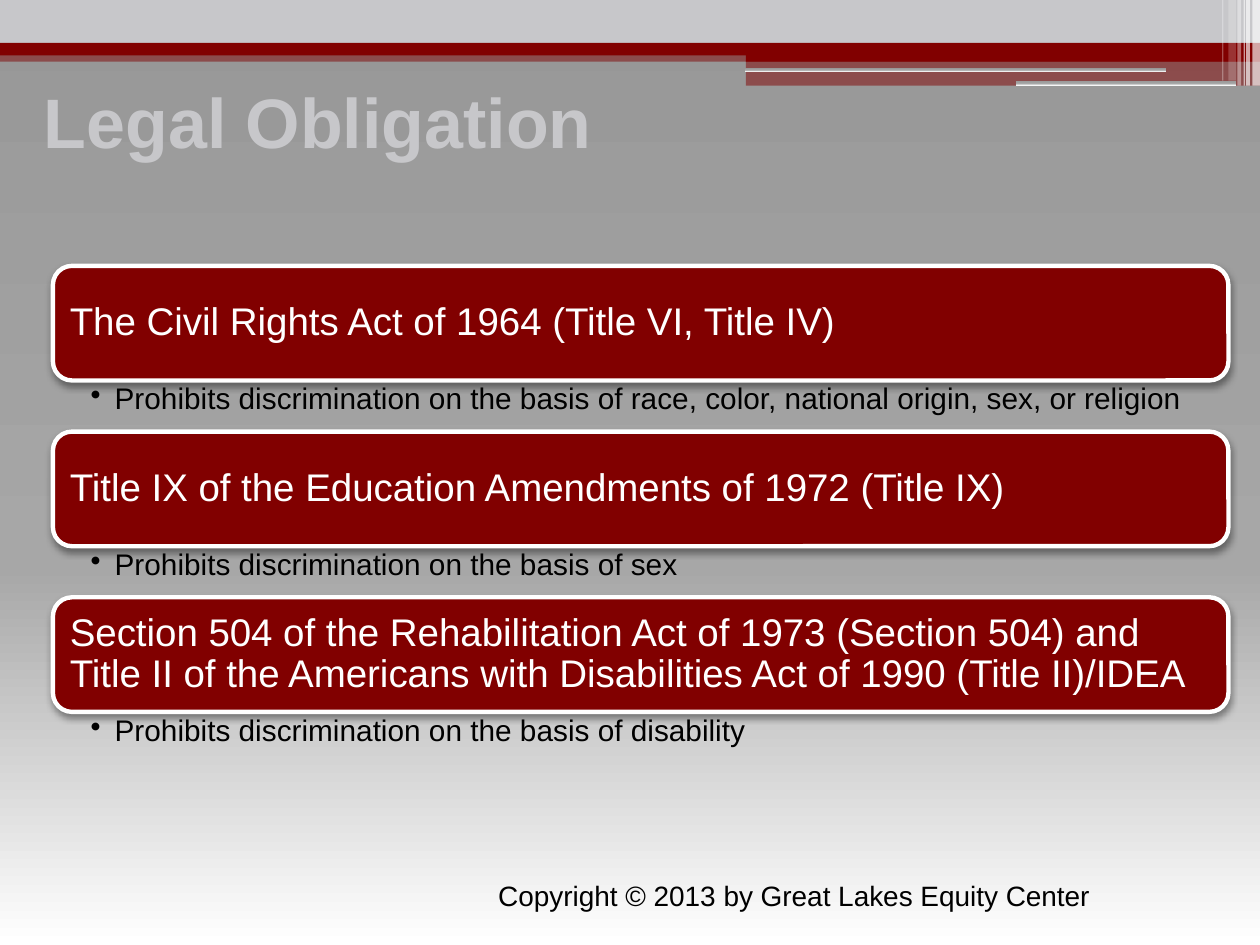
from pptx import Presentation
from pptx.dml.color import RGBColor as Rgb
from pptx.enum.shapes import MSO_SHAPE as Kind
from pptx.enum.text import MSO_ANCHOR as Anchor, PP_ALIGN as Align
from pptx.oxml import parse_xml
from pptx.oxml.ns import nsdecls
from pptx.util import Inches, Pt

HUES = {"red": "810000", "pale": "C7C7CA", "white": "FFFFFF", "black": "000000",
        "dark": "979797", "mid": "A7A7A7"}
FADE = [(0, "dark"), (60, "mid"), (100, "white")]
NS = nsdecls("a")

deck = Presentation()
deck.slide_width, deck.slide_height = Inches(10), Inches(7.5)
# Grid of 100 columns by 75 rows
col, row = deck.slide_width / 100, deck.slide_height / 75
slide = deck.slides.add_slide(deck.slide_layouts[6])


def paint(fill, node, hue, alpha=100):
    """Fill with a colour, or with the grey fade when hue is "fade"."""
    if hue == "fade":
        fill.gradient()
        fill.gradient_angle = 270
        stops = node.xpath(".//a:gsLst")[0]
        stops[:] = [parse_xml(f'<a:gs {NS} pos="{pos * 1000}"><a:srgbClr val="{HUES[tone]}"/></a:gs>')
                    for pos, tone in FADE]
        return
    fill.solid()
    fill.fore_color.rgb = Rgb.from_string(HUES[hue])
    if alpha < 100:
        node.xpath("./p:spPr/a:solidFill/a:srgbClr")[0].append(
            parse_xml(f'<a:alpha {NS} val="{alpha * 1000}"/>'))


def write(shape, text, size, hue, insets, look, bold=False):
    """Put one paragraph in a shape and return it."""
    frame = shape.text_frame
    frame.word_wrap = True
    sides = ("left", "top", "right", "bottom")
    for side, gap in zip(sides, insets):
        setattr(frame, f"margin_{side}", Inches(gap))
    frame.vertical_anchor = look.get("anchor", Anchor.TOP)
    para = frame.paragraphs[0]
    para.alignment = look.get("align", Align.LEFT)
    run = para.add_run()
    run.text = text
    for key, val in {"name": "Arial", "size": Pt(size), "bold": bold}.items():
        setattr(run.font, key, val)
    run.font.color.rgb = Rgb.from_string(HUES[hue])
    return para


# Background
paint(slide.background.fill, slide.element, "fade")

# Header bands and stripes: left, top, width, height, colour, opacity
bands = [
    (0, 4, 100, 0.9, "red", 50),
    (0, 0, 100, 3.4, "pale", 100),
    (0, 3.4, 100, 1, "red", 100),
    (59.2, 3.9, 40.8, 1, "red", 100),
    (59.2, 4.8, 40.8, 2, "red", 50),
    (59.1, 5.4, 33.5, 0.3, "fade", 100),
    (80.6, 6.4, 17.5, 0.4, "fade", 100),
    (99.4, 0, 0.6, 6.8, "white", 65),
    (98.9, 0, 0.3, 6.8, "white", 65),
    (98.7, 0, 0.1, 6.8, "white", 60),
    (98.2, 0, 0.3, 6.8, "white", 40),
    (97.5, 0, 0.6, 6.4, "white", 20),
    (97, 0, 0.1, 6.4, "white", 30),
]
for x, y, w, h, hue, alpha in bands:
    kind = Kind.ROUNDED_RECTANGLE if hue == "fade" else Kind.RECTANGLE
    band = slide.shapes.add_shape(kind, int(x * col), int(y * row), int(w * col), int(h * row))
    band.shadow.inherit = False
    band.line.fill.background()
    paint(band.fill, band.element, hue, alpha)

# Title
title = slide.shapes.add_textbox(int(2.5 * col), int(5 * row), int(90 * col), int(9.2 * row))
write(title, "Legal Obligation", 40, "pale", (0.1, 0.05, 0.1, 0.05),
      {"anchor": Anchor.MIDDLE}, bold=True)

# Laws, each a bar with a bullet below
laws = [
    ("The Civil Rights Act of 1964 (Title VI, Title IV)",
     "Prohibits discrimination on the basis of race, color, national origin, sex, or religion"),
    ("Title IX of the Education Amendments of 1972 (Title IX)",
     "Prohibits discrimination on the basis of sex"),
    ("Section 504 of the Rehabilitation Act of 1973 (Section 504) and Title II of the "
     "Americans with Disabilities Act of 1990 (Title II)/IDEA",
     "Prohibits discrimination on the basis of disability"),
]
left, wide, tall, note = 4.2 * col, 93.3 * col, 9.1 * row, 4 * row
for num, (law, rule) in enumerate(laws):
    top = 21.1 * row + num * (tall + note + 0.05 * row)
    bar = slide.shapes.add_shape(Kind.ROUNDED_RECTANGLE, int(left), int(top), int(wide), int(tall))
    paint(bar.fill, bar.element, "red")
    bar.line.color.rgb = Rgb.from_string(HUES["white"])
    bar.line.width = Pt(2.5)
    bar.shadow.inherit = False
    bar.element.xpath("./p:spPr/a:effectLst")[0].append(parse_xml(
        f'<a:outerShdw {NS} blurRad="{Pt(4.1)}" dist="{Pt(2)}" dir="5400000" rotWithShape="0">'
        f'<a:srgbClr val="{HUES["black"]}"><a:alpha val="40000"/></a:srgbClr></a:outerShdw>'))
    para = write(bar, law, 22, "white", (0.09,) * 4, {"anchor": Anchor.MIDDLE})
    para.line_spacing = 0.9

    box = slide.shapes.add_textbox(int(left), int(top + tall), int(wide), int(note))
    para = write(box, rule, 17, "black", (0.3, 0.03, 0.17, 0.03), {})
    para.level = 1
    para.line_spacing = 0.9
    props = para._p.get_or_add_pPr()
    props.set("marL", str(Inches(0.19)))
    props.set("indent", str(-Inches(0.19)))
    props.append(parse_xml(f'<a:buChar {NS} char="•"/>'))

# Copyright line
foot = slide.shapes.add_textbox(int(36.7 * col), int(69.2 * row), int(50.8 * col), int(3.7 * row))
write(foot, "Copyright © 2013 by Great Lakes Equity Center", 16, "black",
      (0.1, 0.05, 0.1, 0.05), {"align": Align.RIGHT})

deck.save("out.pptx")
